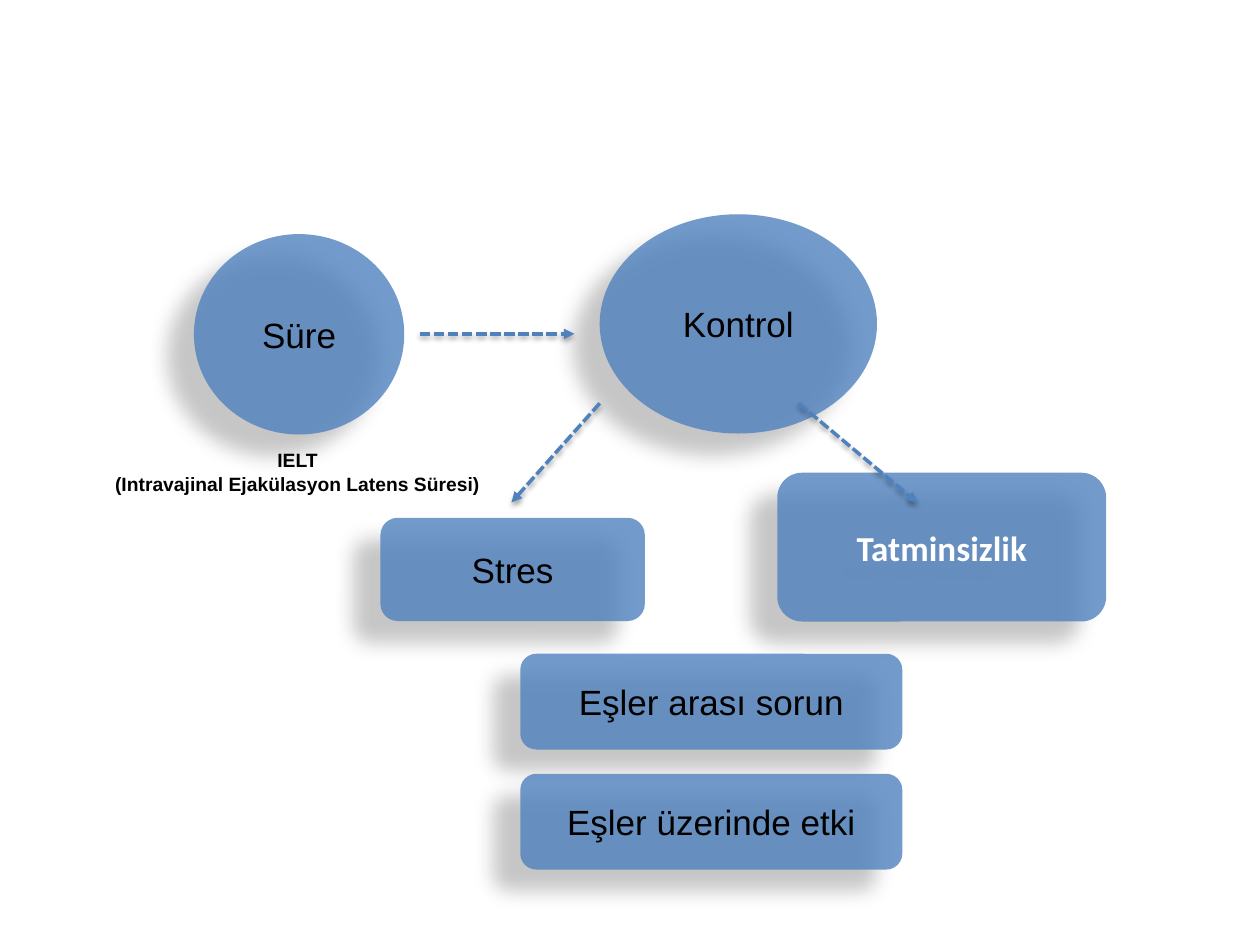
from dataclasses import dataclass

from lxml.etree import SubElement
from pptx import Presentation
from pptx.dml.color import RGBColor
from pptx.enum.dml import MSO_LINE
from pptx.enum.shapes import MSO_CONNECTOR, MSO_SHAPE
from pptx.enum.text import MSO_ANCHOR, PP_ALIGN
from pptx.oxml.ns import qn
from pptx.util import Cm, Pt

COLORS = {"blue": "4F81BD", "black": "000000", "white": "FFFFFF"}


@dataclass
class Node:
    text: str
    left: float
    top: float
    width: float
    height: float
    preset: MSO_SHAPE = MSO_SHAPE.ROUNDED_RECTANGLE
    font: str = "Arial"
    color: str = "black"
    bold: bool = False


@dataclass
class Arrow:
    x1: float
    y1: float
    x2: float
    y2: float


@dataclass
class Shadow:
    alpha: int
    blur: float
    distance: float
    angle: int


NODE_SHADOW = Shadow(28, 11.8, 19.7, 141)
ARROW_SHADOW = Shadow(35, 3.1, 1.8, 90)

# Positions and sizes in centimetres
PARTNER_BOX = dict(left=10.49, width=7.7, height=1.93)
NODES = [
    Node("Süre", 3.91, 4.72, 4.24, 4.04, MSO_SHAPE.OVAL),
    Node("Stres", 7.67, 10.44, 5.33, 2.08),
    Node("Tatminsizlik", 15.67, 9.53, 6.63, 3.0,
         font="Calibri", color="white", bold=True),
    Node("Eşler arası sorun", top=13.18, **PARTNER_BOX),
    Node("Kontrol", 12.09, 4.32, 5.59, 4.42, MSO_SHAPE.OVAL),
    Node("Eşler üzerinde etki", top=15.6, **PARTNER_BOX),
]
ARROWS = [
    Arrow(8.46, 6.73, 11.58, 6.73),
    Arrow(12.09, 8.13, 10.31, 10.13),
    Arrow(16.1, 8.13, 18.49, 10.13),
]


def rgb(name: str) -> RGBColor:
    return RGBColor.from_string(COLORS[name])


def add_alpha(color_element, percent: int) -> None:
    SubElement(color_element, qn("a:alpha"), val=str(percent * 1000))


def add_shadow(properties, shadow: Shadow) -> None:
    effects = properties.find(qn("a:effectLst"))
    if effects is None:
        effects = SubElement(properties, qn("a:effectLst"))
    outer = SubElement(
        effects, qn("a:outerShdw"), blurRad=str(Pt(shadow.blur)),
        dist=str(Pt(shadow.distance)), dir=str(shadow.angle * 60000),
        rotWithShape="0")
    add_alpha(SubElement(outer, qn("a:srgbClr"), val=COLORS["black"]),
              shadow.alpha)


def write_text(frame, text: str, *, size: float, font: str = "Arial",
               color: str = "black", bold: bool = False,
               anchor: MSO_ANCHOR = MSO_ANCHOR.MIDDLE) -> None:
    frame.word_wrap = True
    frame.vertical_anchor = anchor
    frame.text = text
    for paragraph in frame.paragraphs:
        paragraph.alignment = PP_ALIGN.CENTER
        paragraph.font.size = Pt(size)
        paragraph.font.name = font
        paragraph.font.bold = bold
        paragraph.font.color.rgb = rgb(color)


def draw_node(slide, node: Node) -> None:
    shape = slide.shapes.add_shape(
        node.preset, Cm(node.left), Cm(node.top),
        Cm(node.width), Cm(node.height))
    shape.fill.solid()
    shape.fill.fore_color.rgb = rgb("blue")
    shape.line.fill.background()
    shape.shadow.inherit = False
    properties = shape.element.spPr
    add_alpha(properties.find(qn("a:solidFill"))[0], 80)
    add_shadow(properties, NODE_SHADOW)
    write_text(shape.text_frame, node.text, size=20, font=node.font,
               color=node.color, bold=node.bold)


def draw_arrow(slide, arrow: Arrow) -> None:
    connector = slide.shapes.add_connector(
        MSO_CONNECTOR.STRAIGHT, Cm(arrow.x1), Cm(arrow.y1),
        Cm(arrow.x2), Cm(arrow.y2))
    connector.line.color.rgb = rgb("blue")
    connector.line.width = Pt(2)
    connector.line.dash_style = MSO_LINE.SQUARE_DOT
    properties = connector.element.spPr
    SubElement(properties.find(qn("a:ln")), qn("a:tailEnd"), type="triangle")
    add_shadow(properties, ARROW_SHADOW)


def main() -> None:
    presentation = Presentation()
    presentation.slide_width, presentation.slide_height = Cm(25.4), Cm(19.05)
    slide = presentation.slides.add_slide(presentation.slide_layouts[6])

    # Concepts, then the arrows between them
    for node in NODES:
        draw_node(slide, node)
    for arrow in ARROWS:
        draw_arrow(slide, arrow)

    # Caption under "Süre"
    caption = slide.shapes.add_textbox(Cm(1.9), Cm(8.92), Cm(8.2), Cm(1.19))
    write_text(caption.text_frame,
               "IELT\n(Intravajinal Ejakülasyon Latens Süresi)",
               size=11, bold=True, anchor=MSO_ANCHOR.TOP)

    presentation.save("out.pptx")


if __name__ == "__main__":
    main()
